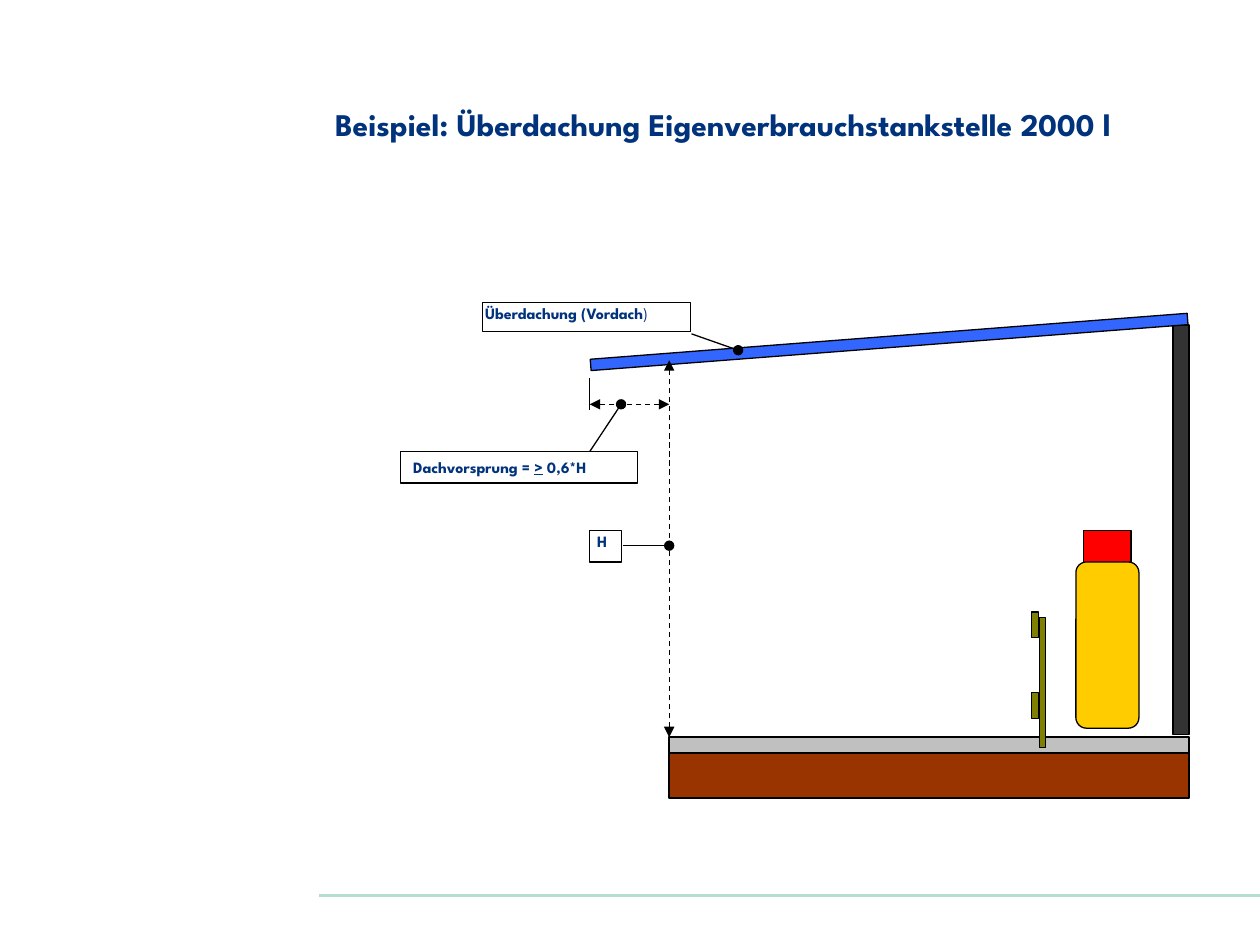
from pptx import Presentation
from pptx.dml.color import RGBColor
from pptx.enum.dml import MSO_LINE
from pptx.enum.shapes import MSO_CONNECTOR, MSO_SHAPE
from pptx.enum.text import MSO_ANCHOR, PP_ALIGN
from pptx.oxml.ns import qn
from pptx.util import Cm, Pt
from lxml.etree import SubElement

FONT = "League Spartan"
NAVY = "00337C"
BLACK = "000000"
TITLE = "Beispiel: Überdachung Eigenverbrauchstankstelle 2000 l"

LEFT, RIGHT, FLOOR = 13.49, 23.97, 14.86
EAVES = 11.89
OVERHANG_Y = 8.15
GUARD_X = 20.8
RECT, ROUNDED = MSO_SHAPE.RECTANGLE, MSO_SHAPE.ROUNDED_RECTANGLE

PARTS = [
    (RECT, "333333", (23.65, 6.55, 0.32, 8.26), 0),
    (RECT, "993300", (LEFT, 15.16, RIGHT - LEFT, 0.93), 0),
    (RECT, "C0C0C0", (LEFT, FLOOR, RIGHT - LEFT, 0.32), 0),
    (RECT, "3366FF", (EAVES, 6.78, 12.07, 0.23), -4.4),
    (RECT, "808000", (GUARD_X, 12.34, 0.13, 0.52), 0),
    (RECT, "FF0000", (21.84, 10.69, 0.96, 3.28), 0),
    (ROUNDED, "FFCC00", (21.69, 11.33, 1.27, 3.35), 0),
    (RECT, "808000", (20.95, 12.45, 0.13, 2.62), 0),
    (RECT, "808000", (GUARD_X, 13.96, 0.13, 0.52), 0),
]

LABELS = [
    ((EAVES, 10.69, 0.64, 0.64), (0.15, 0.03), [("H", True, False)]),
    ((8.08, 9.1, 4.77, 0.64), (0.25, 0.13),
     [("Dachvorsprung = ", True, False), (">", True, True), (" 0,6*H", True, False)]),
    ((9.73, 6.1, 4.19, 0.58), (0.05, 0.03),
     [("Überdachung (Vordach", True, False), (")", False, False)]),
]

DIMENSIONS = [
    (LEFT, FLOOR, LEFT, 7.26),
    (LEFT, OVERHANG_Y, EAVES, OVERHANG_Y),
]
LEADERS = [
    (EAVES, 9.1, 12.52, OVERHANG_Y),
    (12.55, 11, LEFT, 11),
    (13.94, 6.73, 14.88, 7.06),
]
EDGE_MARK = (EAVES, 7.62, EAVES, 8.26)
FOOTER_LINE = (6.43, 18.06, 25.4, 18.06)


def color(value):
    return RGBColor.from_string(value)


def add_part(slide, kind, fill, box, rotation=0):
    shape = slide.shapes.add_shape(kind, *map(Cm, box))
    shape.shadow.inherit = False
    shape.rotation = rotation
    shape.fill.solid()
    shape.fill.fore_color.rgb = color(fill)
    shape.line.color.rgb = color(BLACK)
    shape.line.width = Pt(0.75)
    return shape


def format_font(font, size):
    font.name = FONT
    font.size = Pt(size)
    font.color.rgb = color(NAVY)


def add_label(slide, box, insets, runs):
    frame = add_part(slide, RECT, "FFFFFF", box).text_frame
    frame.margin_left = frame.margin_right = Cm(insets[0])
    frame.margin_top = frame.margin_bottom = Cm(insets[1])
    frame.vertical_anchor = MSO_ANCHOR.TOP
    paragraph = frame.paragraphs[0]
    paragraph.alignment = PP_ALIGN.LEFT
    format_font(paragraph.font, 9)
    for text, bold, underline in runs:
        run = paragraph.add_run()
        run.text = text
        format_font(run.font, 9)
        run.font.bold = bold
        run.font.underline = underline


def add_line(slide, points, line_color=BLACK, width=0.75, dashed=False, head=None, tail=None):
    connector = slide.shapes.add_connector(MSO_CONNECTOR.STRAIGHT, *map(Cm, points))
    connector.line.color.rgb = color(line_color)
    connector.line.width = Pt(width)
    if dashed:
        connector.line.dash_style = MSO_LINE.DASH
    properties = connector.element.spPr
    outline = properties.find(qn("a:ln"))
    for tag, end in (("a:headEnd", head), ("a:tailEnd", tail)):
        if end:
            SubElement(outline, qn(tag), type=end)
    SubElement(properties, qn("a:effectLst"))


def add_title(slide):
    title = slide.shapes.title
    title.left, title.top, title.width, title.height = map(Cm, (6.5, 1.98, 18.9, 1.02))
    frame = title.text_frame
    frame.text = TITLE
    frame.word_wrap = True
    frame.vertical_anchor = MSO_ANCHOR.MIDDLE
    paragraph = frame.paragraphs[0]
    paragraph.alignment = PP_ALIGN.LEFT
    format_font(paragraph.font, 18)
    paragraph.font.bold = True


def main():
    presentation = Presentation()
    presentation.slide_width, presentation.slide_height = Cm(25.4), Cm(19.05)
    slide = presentation.slides.add_slide(presentation.slide_layouts[5])
    add_title(slide)
    add_line(slide, FOOTER_LINE, "B5DECE", 1.75)
    for part in PARTS:
        add_part(slide, *part)
    for label in LABELS:
        add_label(slide, *label)
    for points in DIMENSIONS:
        add_line(slide, points, dashed=True, head="triangle", tail="triangle")
    for points in LEADERS:
        add_line(slide, points, tail="oval")
    add_line(slide, EDGE_MARK)
    presentation.save("out.pptx")


if __name__ == "__main__":
    main()
